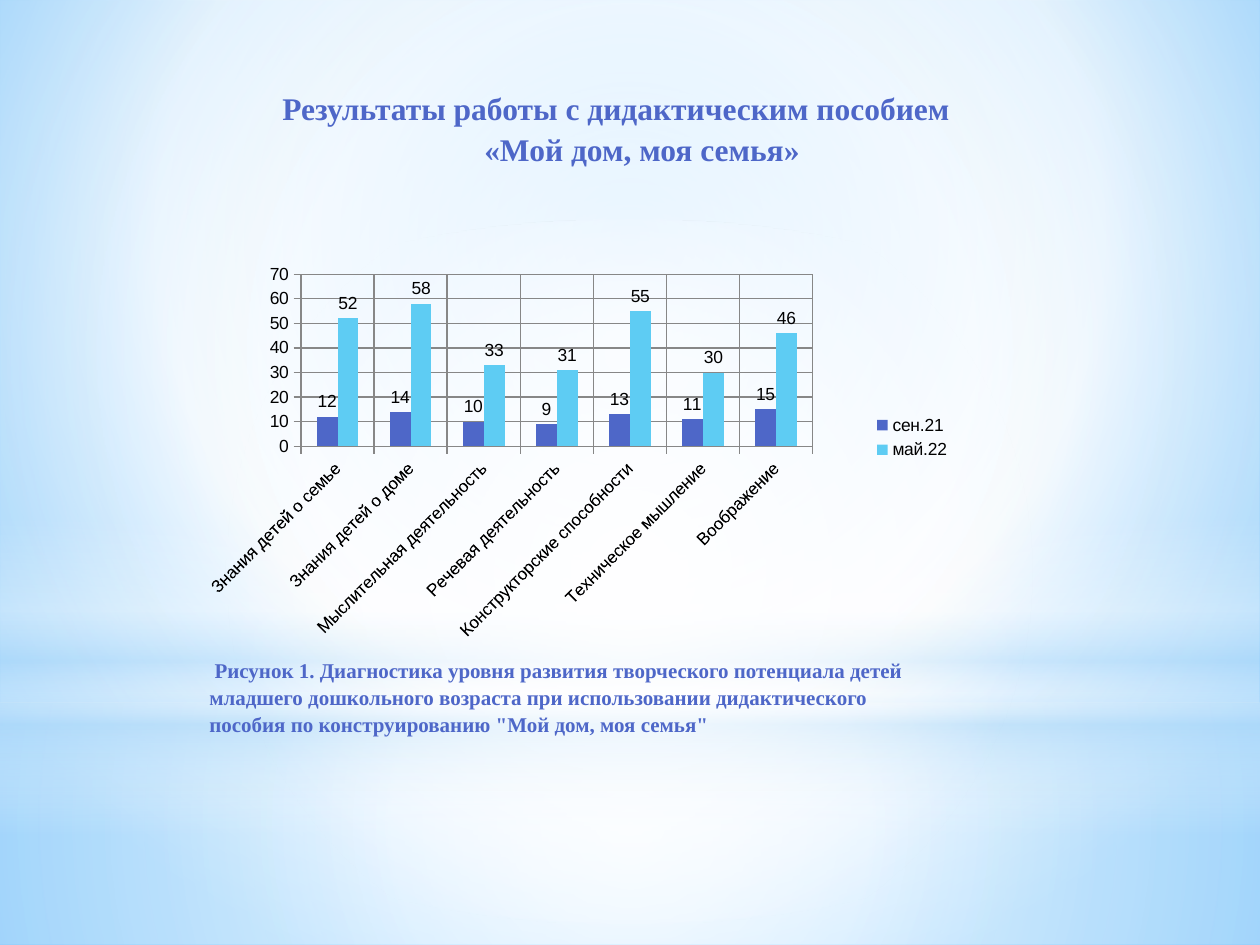
import pptx
import pptx.chart.data
import pptx.dml.color
import pptx.enum.chart
import pptx.enum.shapes
import pptx.enum.text
import pptx.oxml
import pptx.oxml.ns
import pptx.util

RGBColor = pptx.dml.color.RGBColor
WHITE = RGBColor(0xFF, 0xFF, 0xFF)
PALE = RGBColor(0xB4, 0xDC, 0xFA)
SKY = RGBColor(0x9E, 0xD5, 0xFF)
AZURE = RGBColor(0x5B, 0xB9, 0xFF)
INDIGO = RGBColor(0x4E, 0x67, 0xC8)
CYAN = RGBColor(0x5E, 0xCC, 0xF3)
GRAY = RGBColor(0x87, 0x87, 0x87)
BLACK = RGBColor(0, 0, 0)

PX = 914400 / 126
CENTER = (50, 50, 50, 50)
RECTANGLE = pptx.enum.shapes.MSO_SHAPE.RECTANGLE
OVAL = pptx.enum.shapes.MSO_SHAPE.OVAL

CATEGORIES = [
    "Знания детей о семье", "Знания детей о доме", "Мыслительная деятельность",
    "Речевая деятельность", "Конструкторские способности",
    "Техническое мышление", "Воображение",
]
SERIES = [
    ("сен.21", (12, 14, 10, 9, 13, 11, 15), INDIGO),
    ("май.22", (52, 58, 33, 31, 55, 30, 46), CYAN),
]


def px(*lengths):
    return [pptx.util.Emu(round(length * PX)) for length in lengths]


def set_gradient(fill, element, stops, focus=None):
    """Give stops as (position %, colour, opacity %); focus None runs downwards."""
    fill.gradient()
    old = element.xpath(".//a:gradFill")[0]
    marks = "".join(
        f'<a:gs pos="{place * 1000}"><a:srgbClr val="{color}">'
        f'<a:alpha val="{opacity * 1000}"/></a:srgbClr></a:gs>'
        for place, color, opacity in stops)
    if focus:
        sides = " ".join(f'{side}="{share * 1000}"' for side, share in zip("ltrb", focus))
        course = f'<a:path path="circle"><a:fillToRect {sides}/></a:path>'
    else:
        course = '<a:lin ang="5400000" scaled="0"/>'
    new = pptx.oxml.parse_xml(
        f'<a:gradFill {pptx.oxml.ns.nsdecls("a")} rotWithShape="1">'
        f'<a:gsLst>{marks}</a:gsLst>{course}</a:gradFill>')
    old.getparent().replace(old, new)


def add_glow(page, box, kind, stops, focus=None):
    shape = page.shapes.add_shape(kind, *px(*box))
    shape.shadow.inherit = False
    shape.line.fill.background()
    set_gradient(shape.fill, shape._element, stops, focus)


def draw_backdrop(page, box):
    left, top, width, height = box
    horizon = 703
    set_gradient(page.background.fill, page._element,
                 [(0, SKY, 100), (60, WHITE, 100), (100, AZURE, 100)], (20, 10, 20, 60))
    add_glow(page, (left, top + horizon, width, height - horizon), RECTANGLE,
             [(0, WHITE, 91), (37, WHITE, 76), (100, PALE, 79)], CENTER)
    add_glow(page, (left, top, width, horizon), RECTANGLE,
             [(0, WHITE, 89), (48, WHITE, 62), (100, PALE, 79)], CENTER)
    add_glow(page, (left, top + 519, width, 315), RECTANGLE,
             [(0, WHITE, 0), (29, WHITE, 30), (45, PALE, 40),
              (55, WHITE, 26), (65, PALE, 60), (100, WHITE, 0)])
    add_glow(page, (left, top + 220, width, horizon), OVAL,
             [(0, WHITE, 100), (56, WHITE, 0)], CENTER)


def style_axis(axis):
    axis.has_major_gridlines = True
    axis.major_gridlines.format.line.color.rgb = GRAY
    axis.format.line.color.rgb = GRAY
    axis.major_tick_mark = pptx.enum.chart.XL_TICK_MARK.CROSS
    axis.tick_labels.font.size = pptx.util.Pt(10)


def set_plot_layout(chart, x, y, w, h):
    area = chart._chartSpace.xpath("c:chart/c:plotArea")[0]
    for old in area.xpath("c:layout"):
        area.remove(old)
    sizes = "".join(f'<c:{key} val="{share}"/>' for key, share in zip("xywh", (x, y, w, h)))
    area.insert(0, pptx.oxml.parse_xml(
        f'<c:layout {pptx.oxml.ns.nsdecls("c")}><c:manualLayout>'
        '<c:layoutTarget val="inner"/><c:xMode val="edge"/><c:yMode val="edge"/>'
        f'{sizes}</c:manualLayout></c:layout>'))


def draw_chart(page, box):
    data = pptx.chart.data.CategoryChartData()
    data.categories = CATEGORIES
    for name, values, _ in SERIES:
        data.add_series(name, values)
    chart = page.shapes.add_chart(
        pptx.enum.chart.XL_CHART_TYPE.COLUMN_CLUSTERED, *px(*box), data).chart
    chart.has_title = False
    chart.font.name = "Arial"
    chart.font.size = pptx.util.Pt(10)
    chart.font.color.rgb = BLACK
    chart.has_legend = True
    chart.legend.position = pptx.enum.chart.XL_LEGEND_POSITION.RIGHT
    chart.legend.include_in_layout = False

    style_axis(chart.category_axis)
    style_axis(chart.value_axis)
    chart.value_axis.minimum_scale = 0
    chart.value_axis.maximum_scale = 70
    chart.value_axis.major_unit = 10
    chart.category_axis._element.xpath("c:txPr/a:bodyPr")[0].set("rot", "-2700000")

    plot = chart.plots[0]
    plot.vary_by_categories = False
    plot.gap_width = 150
    plot.overlap = 0
    for series, (_, _, color) in zip(plot.series, SERIES):
        series.format.fill.solid()
        series.format.fill.fore_color.rgb = color
        labels = series.data_labels
        labels.show_value = True
        labels.position = pptx.enum.chart.XL_LABEL_POSITION.OUTSIDE_END
    set_plot_layout(chart, 0.12, 0.13, 0.68, 0.39)


def add_text(page, box, text, *, size, align="LEFT", anchor="TOP", hanging=0):
    frame = page.shapes.add_textbox(*px(*box)).text_frame
    frame.word_wrap = True
    frame.vertical_anchor = pptx.enum.text.MSO_ANCHOR[anchor]
    para = frame.paragraphs[0]
    para.alignment = pptx.enum.text.PP_ALIGN[align]
    para.line_spacing = 1.07
    if hanging:
        indent = px(hanging)[0]
        properties = para._p.get_or_add_pPr()
        properties.set("marL", str(indent))
        properties.set("indent", str(-indent))
    for number, line in enumerate(text.split("\n")):
        if number:
            para.add_line_break()
        span = para.add_run()
        span.text = line
        span.font.name = "Times New Roman"
        span.font.size = pptx.util.Pt(size)
        span.font.bold = True
        span.font.color.rgb = INDIGO


def main():
    deck = pptx.Presentation()
    deck.slide_width, deck.slide_height = px(1260, 945)
    page = deck.slides.add_slide(deck.slide_layouts[6])
    draw_backdrop(page, (0, 0, 1260, 945))
    draw_chart(page, (207, 217, 756, 441))
    add_text(page, (197, 650, 728, 89),
             " Рисунок 1. Диагностика уровня развития творческого потенциала детей "
             "младшего дошкольного возраста при использовании дидактического пособия "
             'по конструированию "Мой дом, моя семья"', size=12)
    add_text(page, (186, 78, 868, 98),
             "Результаты работы с дидактическим пособием \n«Мой дом, моя семья»",
             size=18, align="CENTER", anchor="MIDDLE", hanging=44)
    deck.save("out.pptx")


if __name__ == "__main__":
    main()
